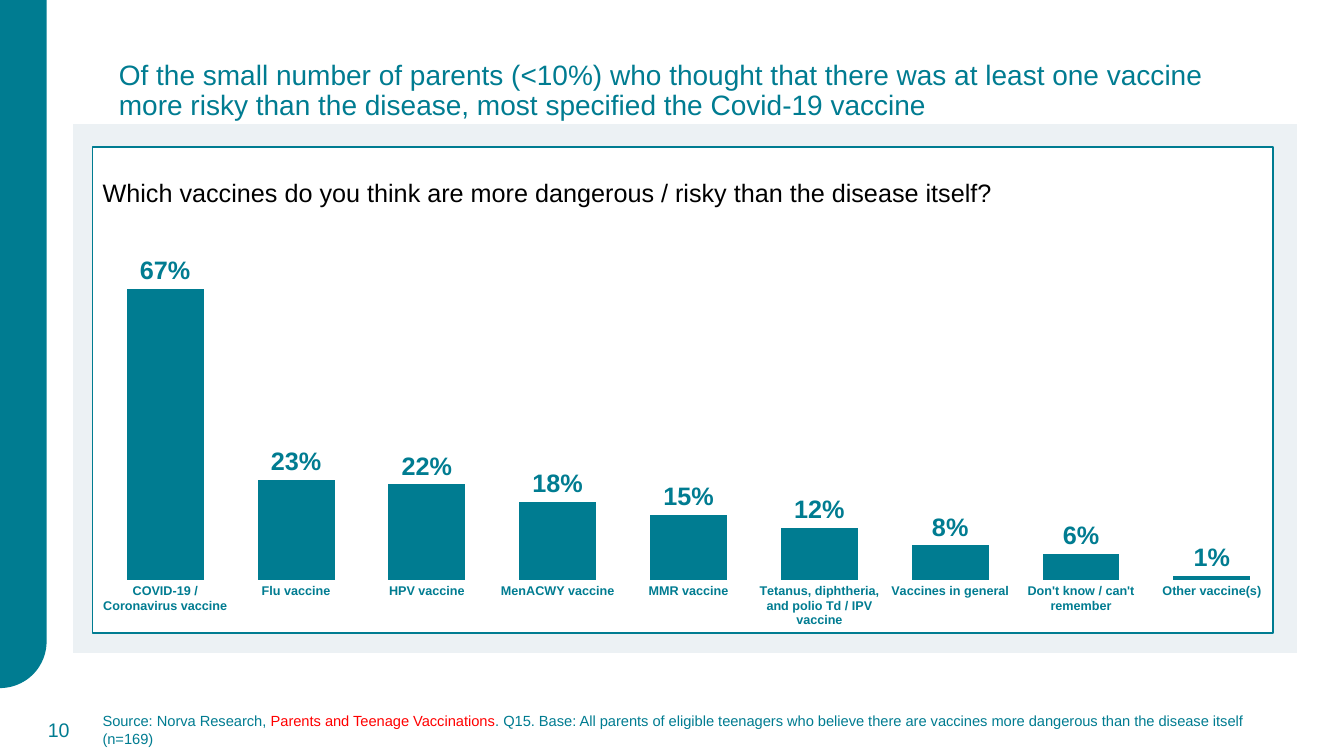
import math

import pptx
import pptx.chart.data
import pptx.dml.color
import pptx.enum.chart
import pptx.enum.shapes
import pptx.enum.text
import pptx.oxml
import pptx.oxml.ns
import pptx.util

Pt = pptx.util.Pt
TEAL = pptx.dml.color.RGBColor(0x00, 0x7C, 0x91)
PALE = pptx.dml.color.RGBColor(0xEC, 0xF1, 0xF4)
RED = pptx.dml.color.RGBColor(0xFF, 0x00, 0x00)
WHITE = pptx.dml.color.RGBColor(0xFF, 0xFF, 0xFF)
BLACK = pptx.dml.color.RGBColor(0x00, 0x00, 0x00)
FONT = "Arial"
ALIGN = pptx.enum.text.PP_ALIGN
ANCHOR = pptx.enum.text.MSO_ANCHOR

TITLE = (
    "Of the small number of parents (<10%) who thought that there was at least "
    "one vaccine more risky than the disease, most specified the Covid-19 vaccine"
)
QUESTION = "Which vaccines do you think are more dangerous / risky than the disease itself?"
SOURCE = [
    ("Source: Norva Research, ", TEAL),
    ("Parents and Teenage Vaccinations", RED),
    (
        ". Q15. Base: All parents of eligible teenagers who believe there are "
        "vaccines more dangerous than the disease itself (n=169)",
        TEAL,
    ),
]
SHARES = {
    "COVID-19 / Coronavirus vaccine": 0.67,
    "Flu vaccine": 0.23,
    "HPV vaccine": 0.22,
    "MenACWY vaccine": 0.18,
    "MMR vaccine": 0.15,
    "Tetanus, diphtheria, and polio Td / IPV vaccine": 0.12,
    "Vaccines in general": 0.08,
    "Don't know / can't remember": 0.06,
    "Other vaccine(s)": 0.01,
}
LAYOUT = (
    '<c:layout %s><c:manualLayout><c:layoutTarget val="inner"/>'
    '<c:xMode val="edge"/><c:yMode val="edge"/>'
    '<c:x val="0.006"/><c:y val="0.033"/><c:w val="0.99"/><c:h val="0.79"/>'
    "</c:manualLayout></c:layout>"
) % pptx.oxml.ns.nsdecls("c")


def set_font(font, size, color, bold=False):
    """Apply the slide's typeface with a size, colour and weight."""
    font.name, font.size, font.bold = FONT, Pt(size), bold
    font.color.rgb = color


def add_text(slide, box, text, size, color=TEAL, align=ALIGN.LEFT,
             anchor=ANCHOR.MIDDLE, spacing=None):
    """Add a text box from a string or a list of (text, colour) runs."""
    tf = slide.shapes.add_textbox(*map(Pt, box)).text_frame
    tf.word_wrap = True
    tf.vertical_anchor = anchor
    p = tf.paragraphs[0]
    p.alignment = align
    p.line_spacing = spacing
    for words, run_color in [(text, color)] if isinstance(text, str) else text:
        r = p.add_run()
        r.text = words
        set_font(r.font, size, run_color)


def paint(sp, fill, line, width):
    """Give a shape a flat fill and outline."""
    sp.shadow.inherit = False
    sp.fill.solid()
    sp.fill.fore_color.rgb = fill
    sp.line.color.rgb = line
    sp.line.width = Pt(width)


def add_rect(slide, box, fill, line, width):
    """Add a flat rectangle."""
    rect = pptx.enum.shapes.MSO_SHAPE.RECTANGLE
    paint(slide.shapes.add_shape(rect, *map(Pt, box)), fill, line, width)


def add_side_band(slide, box):
    """Draw the side band with its rounded lower right corner."""
    x, y, w, h = box
    angles = [math.radians(3 * i) for i in range(31)]
    arc = [(x + w * math.cos(a), y + h - w + w * math.sin(a)) for a in angles]
    points = [(Pt(px), Pt(py)) for px, py in [(x + w, y)] + arc]
    fb = slide.shapes.build_freeform(Pt(x), Pt(y))
    fb.add_line_segments(points, close=True)
    paint(fb.convert_to_shape(), TEAL, TEAL, 1)


def add_share_chart(slide, box):
    """Add the column chart of vaccine shares."""
    data = pptx.chart.data.CategoryChartData(number_format="0%")
    data.categories = list(SHARES)
    data.add_series("Series 1", list(SHARES.values()))
    kind = pptx.enum.chart.XL_CHART_TYPE.COLUMN_CLUSTERED
    chart = slide.shapes.add_chart(kind, *map(Pt, box), data).chart
    chart.has_legend = chart.has_title = False
    set_font(chart.font, 10, BLACK)

    axis = chart.category_axis
    axis.major_tick_mark = pptx.enum.chart.XL_TICK_MARK.NONE
    axis.format.line.fill.background()
    set_font(axis.tick_labels.font, 9, TEAL, bold=True)

    scale = chart.value_axis
    scale.minimum_scale, scale.maximum_scale = 0, 0.8
    scale.has_major_gridlines = False
    scale.visible = False

    plot = chart.plots[0]
    plot.gap_width = 70
    plot.vary_by_categories = False
    fill = plot.series[0].format.fill
    fill.solid()
    fill.fore_color.rgb = TEAL
    plot.has_data_labels = True
    labels = plot.data_labels
    labels.show_value = True
    labels.number_format, labels.number_format_is_linked = "0%", False
    labels.position = pptx.enum.chart.XL_LABEL_POSITION.OUTSIDE_END
    set_font(labels.font, 18, TEAL, bold=True)

    area = chart._chartSpace.chart.plotArea
    for old in area.findall(pptx.oxml.ns.qn("c:layout")):
        area.remove(old)
    area.insert(0, pptx.oxml.parse_xml(LAYOUT))


def add_panel(slide, box):
    """Place the pale panel with its framed question and chart."""
    x, y, w, h = box
    left = x + 15.1
    add_rect(slide, box, PALE, WHITE, 1.5)
    add_rect(slide, (left, y + 17.3, w - 33.1, h - 32.4), WHITE, TEAL, 1)
    add_share_chart(slide, (left, y + 67.7, w - 26.6, h - 64.8))
    add_text(slide, (left, y + 35.3, w - 120, 28.8), QUESTION, 18,
             color=BLACK, anchor=ANCHOR.TOP)


def add_footer(slide, box):
    """Place the page number and the source note."""
    x, y, w, h = box
    add_text(slide, (x, y, 46.8, h), "10", 14, align=ALIGN.RIGHT)
    add_text(slide, (x + 56.2, y, w - 56.2, h), SOURCE, 10.5)


def main():
    """Build the slide and save it."""
    prs = pptx.Presentation()
    prs.slide_width, prs.slide_height = Pt(960), Pt(540)
    slide = prs.slides.add_slide(prs.slide_layouts[6])
    add_side_band(slide, (0, 0, 32.8, 491))
    add_panel(slide, (51.1, 87.8, 876.2, 379.4))
    add_text(slide, (77.8, 13, 828, 104.4), TITLE, 20, spacing=0.9)
    add_footer(slide, (10, 506.9, 891.4, 28.8))
    prs.save("out.pptx")


if __name__ == "__main__":
    main()
